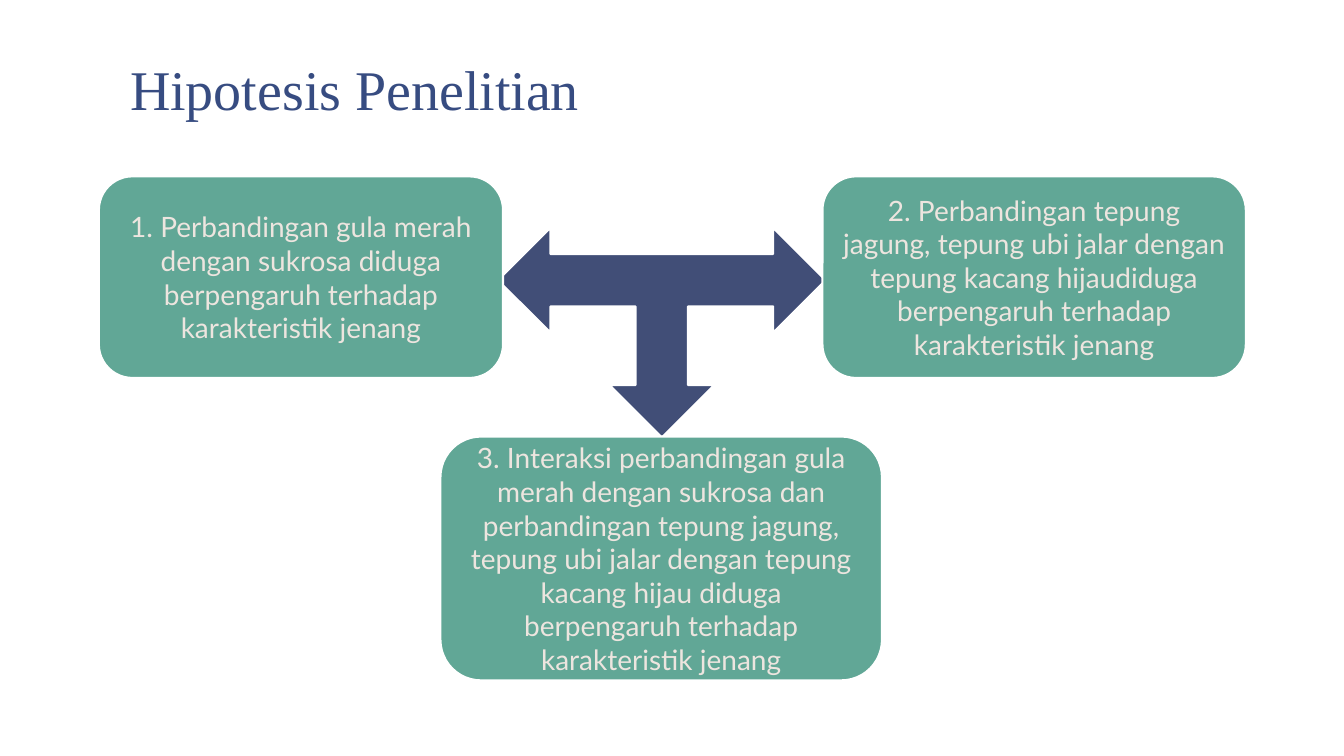
from pptx import Presentation
from pptx.dml.color import RGBColor
from pptx.enum.shapes import MSO_SHAPE
from pptx.enum.text import MSO_ANCHOR, PP_ALIGN
from pptx.util import Pt

WHITE = RGBColor(0xFF, 0xFF, 0xFF)
GREEN = RGBColor(0x61, 0xA7, 0x96)
NAVY = RGBColor(0x41, 0x4E, 0x77)
TITLE_BLUE = RGBColor(0x37, 0x4C, 0x81)
CREAM = RGBColor(0xED, 0xE5, 0xDF)

# Left, top, width, height in points
TITLE_BOX = (83.5, 30.2, 800, 62)
ARROW_BOX = (355.7, 162.7, 234, 149.8)
HYPOTHESES = [
    ((70.6, 126, 288.7, 144),
     "1. Perbandingan gula merah dengan sukrosa diduga berpengaruh "
     "terhadap karakteristik jenang"),
    ((587.5, 126, 302.4, 144),
     "2. Perbandingan tepung jagung, tepung ubi jalar dengan tepung kacang "
     "hijaudiduga berpengaruh terhadap karakteristik jenang"),
    ((314.6, 311.8, 315.4, 174.2),
     "3. Interaksi perbandingan gula merah dengan sukrosa dan perbandingan "
     "tepung jagung, tepung ubi jalar dengan tepung kacang hijau diduga "
     "berpengaruh terhadap karakteristik jenang"),
]


def write(shape, text, font_name, size, color, anchor, align):
    frame = shape.text_frame
    frame.word_wrap = True
    frame.vertical_anchor = anchor
    frame.text = text
    para = frame.paragraphs[0]
    para.alignment = align
    font = para.runs[0].font
    font.name, font.size = font_name, Pt(size)
    font.color.rgb = color
    return para


def add_block(page, kind, box, color):
    shape = page.shapes.add_shape(kind, *map(Pt, box))
    shape.shadow.inherit = False
    shape.fill.solid()
    shape.fill.fore_color.rgb = color
    shape.line.color.rgb = WHITE
    shape.line.width = Pt(1.5)
    return shape


def add_title(page, box):
    title = page.shapes.add_textbox(*map(Pt, box))
    para = write(title, "Hipotesis Penelitian", "Times New Roman", 40,
                 TITLE_BLUE, MSO_ANCHOR.BOTTOM, PP_ALIGN.LEFT)
    para.line_spacing = 0.85
    frame = title.text_frame
    frame.margin_left = frame.margin_right = Pt(9.4)
    frame.margin_top = frame.margin_bottom = Pt(5)


def add_arrow(page, box):
    arrow = add_block(page, MSO_SHAPE.LEFT_RIGHT_UP_ARROW, box, NAVY)
    arrow.rotation = 180  # third head points down


def add_hypothesis(page, box, text):
    shape = add_block(page, MSO_SHAPE.ROUNDED_RECTANGLE, box, GREEN)
    write(shape, text, "Lato", 20, CREAM, MSO_ANCHOR.MIDDLE, PP_ALIGN.CENTER)


def main():
    deck = Presentation()
    deck.slide_width, deck.slide_height = Pt(960), Pt(540)
    page = deck.slides.add_slide(deck.slide_layouts[6])
    page.background.fill.solid()
    page.background.fill.fore_color.rgb = WHITE

    # Arrow lies behind the three hypotheses
    add_arrow(page, ARROW_BOX)
    for box, text in HYPOTHESES:
        add_hypothesis(page, box, text)
    add_title(page, TITLE_BOX)
    deck.save("out.pptx")


if __name__ == "__main__":
    main()
